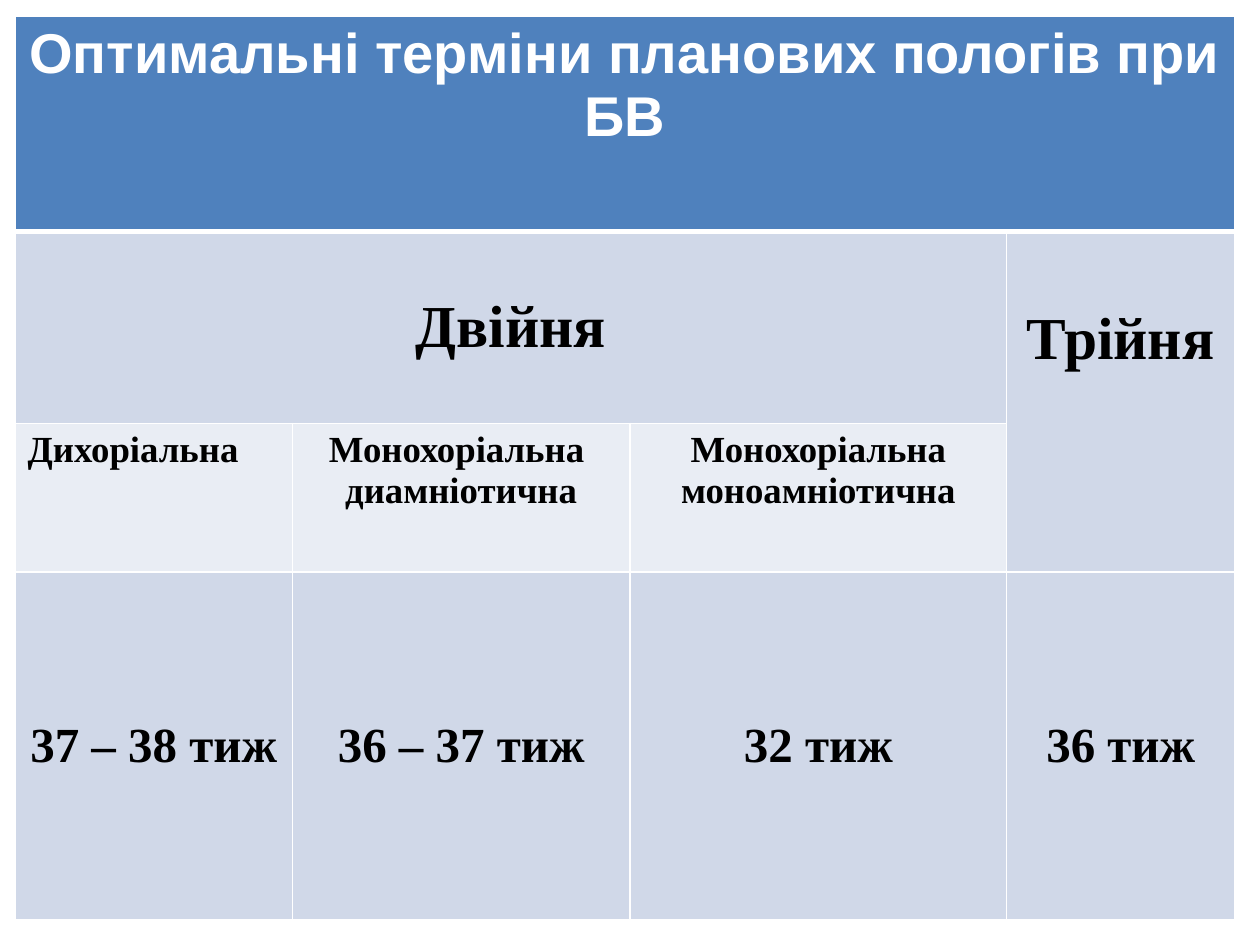
from dataclasses import dataclass

from lxml.etree import SubElement
from pptx import Presentation
from pptx.dml.color import RGBColor
from pptx.enum.text import MSO_ANCHOR, PP_ALIGN
from pptx.oxml.ns import qn
from pptx.util import Inches, Pt


@dataclass(frozen=True)
class Theme:
    title_fill: str = "4F81BD"
    band: str = "D0D8E8"
    light_band: str = "E9EDF4"
    rule: str = "FFFFFF"
    title_ink: str = "FFFFFF"
    ink: str = "000000"
    title_font: str = "Arial"
    body_font: str = "Times New Roman"
    title_size: int = 32
    group_size: int = 34
    type_size: int = 21
    term_size: int = 28
    rule_width: int = 1
    title_rule_width: int = 3


class SlideBuilder:
    GRID_COLUMNS, GRID_ROWS = 100, 75

    def __init__(self, presentation, theme):
        self.theme = theme
        self.slide = presentation.slides.add_slide(presentation.slide_layouts[6])
        self.column = presentation.slide_width / self.GRID_COLUMNS
        self.row = presentation.slide_height / self.GRID_ROWS

    def table(self, left, top, widths, heights):
        frame = self.slide.shapes.add_table(
            len(heights), len(widths),
            round(left * self.column), round(top * self.row),
            round(sum(widths) * self.column), round(sum(heights) * self.row))
        grid = frame.table
        for grid_column, width in zip(grid.columns, widths):
            grid_column.width = round(width * self.column)
        for grid_row, height in zip(grid.rows, heights):
            grid_row.height = round(height * self.row)
        return grid

    def borders(self, cell, bottom_width):
        properties = cell._tc.get_or_add_tcPr()
        for side in "LRTB":
            width = bottom_width if side == "B" else self.theme.rule_width
            line = SubElement(properties, qn(f"a:ln{side}"), w=str(Pt(width)))
            SubElement(SubElement(line, qn("a:solidFill")),
                       qn("a:srgbClr"), val=self.theme.rule)

    def cell(self, grid, row, column, text, fill, size, rows=1, columns=1,
             font=None, ink=None, anchor=MSO_ANCHOR.TOP, align=PP_ALIGN.CENTER,
             bottom_width=None):
        theme = self.theme
        origin = grid.cell(row, column)
        if rows * columns > 1:
            origin.merge(grid.cell(row + rows - 1, column + columns - 1))
        for r in range(row, row + rows):
            for c in range(column, column + columns):
                part = grid.cell(r, c)
                self.borders(part, bottom_width or theme.rule_width)
                part.fill.solid()
                part.fill.fore_color.rgb = RGBColor.from_string(fill)
        origin.vertical_anchor = anchor
        origin.text = text
        for paragraph in origin.text_frame.paragraphs:
            paragraph.alignment = align
            paragraph.font.name = font or theme.body_font
            paragraph.font.size = Pt(size)
            paragraph.font.bold = True
            paragraph.font.color.rgb = RGBColor.from_string(ink or theme.ink)
        return origin


def main():
    presentation = Presentation()
    presentation.slide_width, presentation.slide_height = Inches(10), Inches(7.5)
    theme = Theme()
    builder = SlideBuilder(presentation, theme)
    terms = builder.table(1.2, 1.3, [22, 26.8, 29.9, 18.1], [17.1, 15.2, 11.8, 27.6])

    builder.cell(terms, 0, 0, "Оптимальні терміни планових пологів при БВ",
                 theme.title_fill, theme.title_size, columns=4,
                 font=theme.title_font, ink=theme.title_ink,
                 bottom_width=theme.title_rule_width)
    builder.cell(terms, 1, 0, "Двійня", theme.band, theme.group_size,
                 columns=3, anchor=MSO_ANCHOR.MIDDLE)
    triplets = builder.cell(terms, 1, 3, "Трійня", theme.band, theme.group_size, rows=2)
    triplets.margin_top = round(5.9 * builder.row)

    twin_types = [("Дихоріальна", PP_ALIGN.LEFT),
                  ("Монохоріальна \nдиамніотична", PP_ALIGN.CENTER),
                  ("Монохоріальна\nмоноамніотична", PP_ALIGN.CENTER)]
    for column, (twin_type, align) in enumerate(twin_types):
        builder.cell(terms, 2, column, twin_type, theme.light_band,
                     theme.type_size, align=align)

    for column, weeks in enumerate(["37 – 38", "36 – 37", "32", "36"]):
        builder.cell(terms, 3, column, f"{weeks} тиж", theme.band,
                     theme.term_size, anchor=MSO_ANCHOR.MIDDLE)

    presentation.save("out.pptx")


if __name__ == "__main__":
    main()
